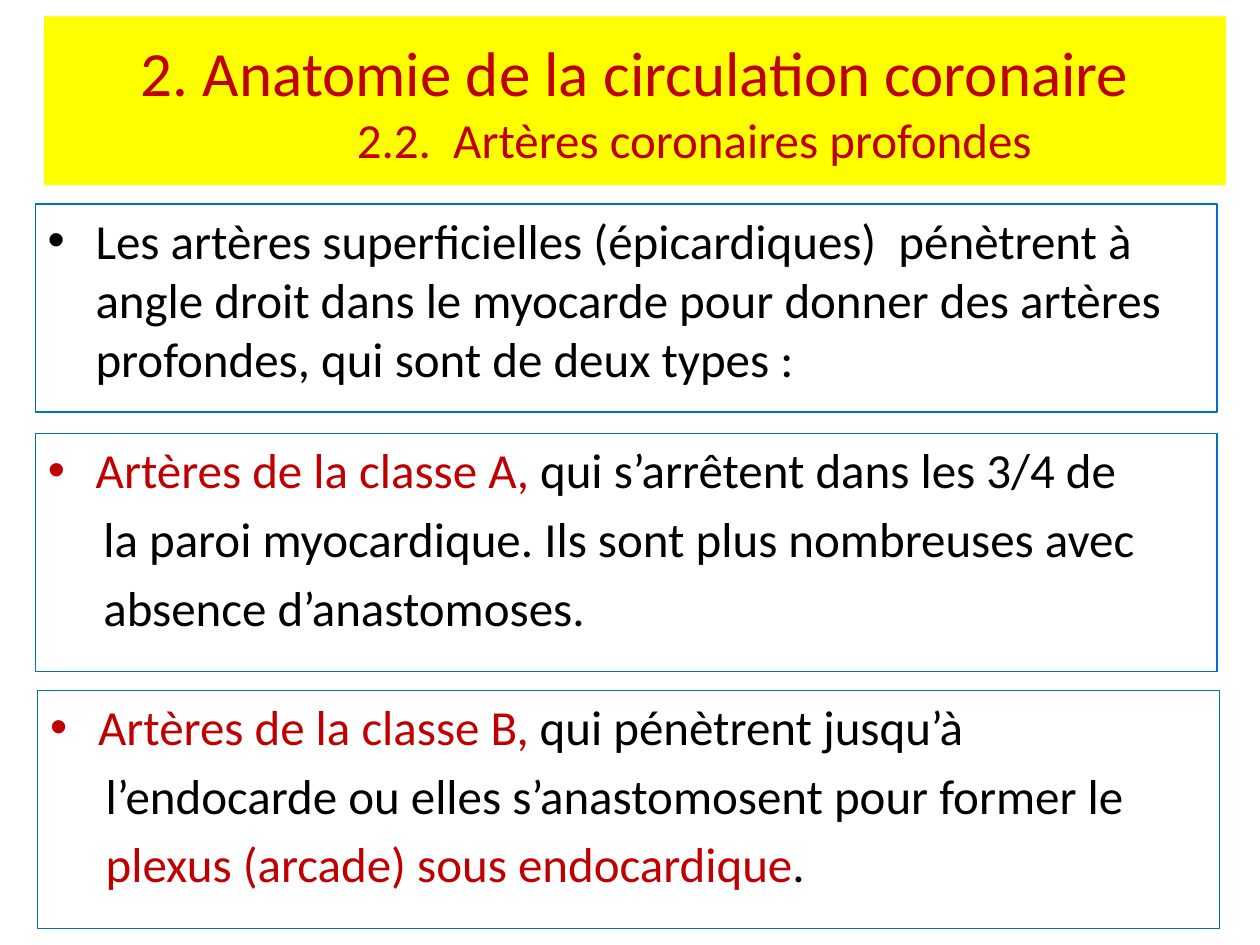
from dataclasses import dataclass

from lxml import etree
from pptx import Presentation
from pptx.dml.color import RGBColor
from pptx.enum import text
from pptx.oxml import ns
from pptx.util import Inches, Pt


@dataclass(frozen=True)
class Theme:
    """Colours, font and type sizes of the slide."""
    font: str = "Calibri"
    red: RGBColor = RGBColor(0xC0, 0, 0)
    black: RGBColor = RGBColor(0, 0, 0)
    yellow: RGBColor = RGBColor(0xFF, 0xFF, 0)
    blue: RGBColor = RGBColor(0, 0x70, 0xC0)
    head: Pt = Pt(36)
    size: Pt = Pt(28)
    gap: Pt = Pt(5.6)
    edge: Pt = Pt(0.75)


THEME = Theme()


def place(shape, box):
    """Set a shape to a box of left, top, width and height in inches."""
    shape.left, shape.top, shape.width, shape.height = map(Inches, box)


def indent(para, left, first, mark=None):
    """Set the indents of a paragraph and its bullet."""
    props = para._p.get_or_add_pPr()
    props.set("marL", str(Inches(left)))
    props.set("indent", str(Inches(first)))
    if mark:
        face = etree.SubElement(props, ns.qn("a:buFont"))
        face.set("typeface", "Arial")
        etree.SubElement(props, ns.qn("a:buChar")).set("char", mark)
    else:
        etree.SubElement(props, ns.qn("a:buNone"))


def style(para, size):
    """Set the font and size of a paragraph."""
    para.font.name = THEME.font
    para.font.size = size


def add_title(shape, box, head, sub):
    """Fill the title band with a heading and a smaller second line."""
    place(shape, box)
    shape.fill.solid()
    shape.fill.fore_color.rgb = THEME.yellow
    frame = shape.text_frame
    frame.auto_size = text.MSO_AUTO_SIZE.NONE
    frame.vertical_anchor = text.MSO_ANCHOR.MIDDLE
    para = frame.paragraphs[0]
    para.alignment = text.PP_ALIGN.CENTER
    indent(para, 0.94, -0.94)
    style(para, THEME.head)
    para.font.color.rgb = THEME.red
    para.add_run().text = head
    para.add_line_break()
    run = para.add_run()
    run.text = sub
    run.font.size = THEME.size


def add_panel(shape, box, lines):
    """Fill an outlined panel: one bulleted line, then lines set under it."""
    place(shape, box)
    shape.fill.background()
    shape.line.color.rgb = THEME.blue
    shape.line.width = THEME.edge
    frame = shape.text_frame
    frame.word_wrap = True
    frame.auto_size = text.MSO_AUTO_SIZE.NONE
    for row, runs in enumerate(lines):
        para = frame.add_paragraph() if row else frame.paragraphs[0]
        para.space_before = THEME.gap
        if row:
            indent(para, 0.44, 0)
        else:
            indent(para, 0.38, -0.38, "•")
        style(para, THEME.size)
        if len(runs) == 1:
            para.font.color.rgb = runs[0][1]
        for words, color in runs:
            run = para.add_run()
            run.text = words
            if len(runs) > 1:
                run.font.color.rgb = color


def main():
    """Build and save the slide."""
    deck = Presentation()
    deck.slide_width, deck.slide_height = Inches(10), Inches(7.5)
    slide = deck.slides.add_slide(deck.slide_layouts[1])
    red, black = THEME.red, THEME.black
    add_title(slide.shapes.title, (0.35, 0.13, 9.38, 1.34),
              "2. Anatomie de la circulation coronaire",
              "2.2.  Artères coronaires profondes")
    class_a = [
        [("Artères de la classe A, ", red),
         ("qui s’arrêtent dans les 3/4 de", black)],
        [("la paroi myocardique. Ils sont plus nombreuses avec", black)],
        [("absence d’anastomoses.", black)],
    ]
    class_b = [
        [("Artères de la classe B, ", red), ("qui pénètrent jusqu’à", black)],
        [("l’endocarde ou elles s’anastomosent pour former le", black)],
        [("plexus (arcade) sous endocardique", red), (".", black)],
    ]
    intro = [[("Les artères superficielles (épicardiques)  pénètrent à angle "
               "droit dans le myocarde pour donner des artères profondes, "
               "qui sont de deux types :", black)]]
    add_panel(slide.placeholders[1], (0.28, 3.44, 9.38, 1.89), class_a)
    for box, lines in (((0.3, 5.48, 9.38, 1.89), class_b),
                       ((0.28, 1.62, 9.38, 1.65), intro)):
        add_panel(slide.shapes.add_textbox(*map(Inches, box)), box, lines)
    deck.save("out.pptx")


if __name__ == "__main__":
    main()
